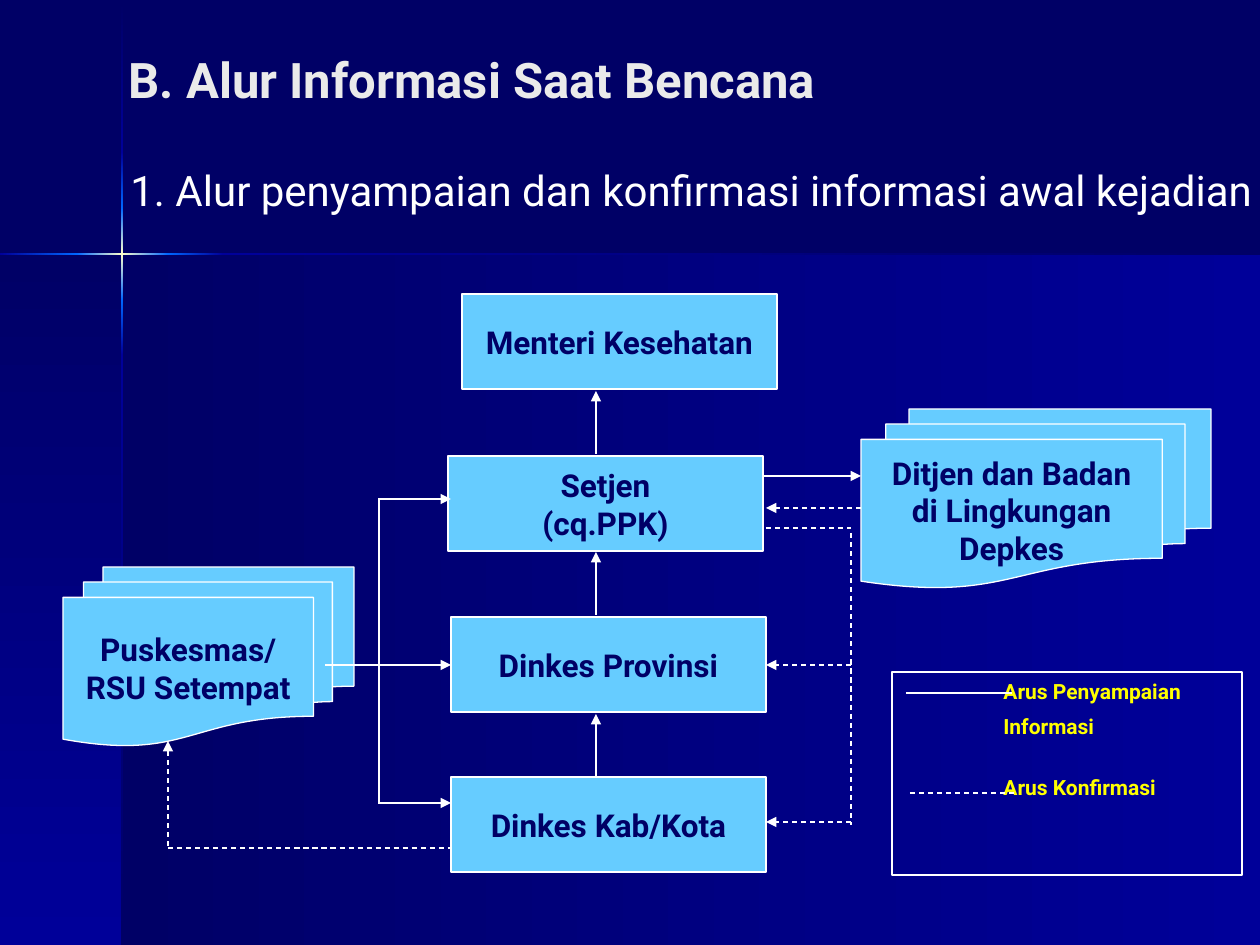
from itertools import pairwise

from lxml import etree
from pptx import Presentation
from pptx.dml.color import RGBColor
from pptx.enum.dml import MSO_LINE
from pptx.enum.shapes import MSO_CONNECTOR, MSO_SHAPE
from pptx.enum.text import MSO_ANCHOR, MSO_AUTO_SIZE, PP_ALIGN
from pptx.oxml.ns import qn
from pptx.util import Pt

RECT = MSO_SHAPE.RECTANGLE
DOCUMENTS = MSO_SHAPE.FLOWCHART_MULTIDOCUMENT
STRAIGHT = MSO_CONNECTOR.STRAIGHT
DASH = MSO_LINE.DASH
MIDDLE, TOP = MSO_ANCHOR.MIDDLE, MSO_ANCHOR.TOP
LEFT, CENTER = PP_ALIGN.LEFT, PP_ALIGN.CENTER

EMU_PER_PX = 914400 / 126
WIDTH, HEIGHT = 1260, 945
FONT = "Roboto"
NAVY, BLUE, GLOW, CREAM = "000066", "000099", "0066FF", "FFFFCC"
WHITE, SKY, YELLOW, PALE = "FFFFFF", "66CCFF", "FFFF00", "EAEAEA"
RIGHTWARD, DOWNWARD = 0, 270

# Colour stops along the two beams of light: position, colour
BEAM_DOWN = [(1, NAVY), (152, BLUE), (208, GLOW), (254, CREAM),
             (300, GLOW), (355, BLUE), (945, NAVY)]
BEAM_ACROSS = [(0, BLUE), (77, GLOW), (122, CREAM),
               (168, GLOW), (223, BLUE), (1260, NAVY)]

OFFICES = [
    (462, 294, ["Menteri Kesehatan"]),
    (448, 456, ["Setjen", "(cq.PPK)"]),
    (451, 617, ["Dinkes Provinsi"]),
    (451, 777, ["Dinkes Kab/Kota"]),
]
OFFICE_SIZE = (315, 95)
UNITS = [
    ((861, 409, 350, 179), ["Ditjen dan Badan", "di Lingkungan", "Depkes"]),
    ((63, 567, 291, 179), ["Puskesmas/", "RSU Setempat"]),
]

# Each flow: start x, start y, end x, end y
REPORT_ARROWS = [
    (596, 777, 596, 714), (596, 615, 596, 552), (596, 454, 596, 391),
    (764, 476, 861, 476), (325, 665, 451, 665),
    (378, 499, 451, 499), (378, 803, 451, 803),
]
REPORT_LINES = [(379, 499, 379, 802), (906, 693, 1012, 693)]
CONFIRM_ARROWS = [
    (861, 508, 766, 508), (851, 665, 766, 665),
    (851, 822, 766, 822), (168, 846, 168, 741),
]
CONFIRM_LINES = [(766, 528, 851, 528), (851, 533, 851, 825),
                 (168, 848, 451, 848), (910, 793, 1016, 793)]


def px(value):
    return round(value * EMU_PER_PX)


def rgb(hex_color):
    return RGBColor.from_string(hex_color)


def write(frame, lines, size, color, bold=True, align=LEFT, anchor=MIDDLE, wrap=False):
    frame.word_wrap = wrap
    frame.auto_size = MSO_AUTO_SIZE.NONE
    frame.vertical_anchor = anchor
    frame.text = "\n".join(lines)
    for paragraph in frame.paragraphs:
        paragraph.alignment = align
        font = paragraph.font
        font.name, font.size, font.bold = FONT, Pt(size), bold
        font.color.rgb = rgb(color)


def add_gradient(slide, box, start, end, angle):
    panel = slide.shapes.add_shape(RECT, *map(px, box))
    panel.shadow.inherit = False
    panel.line.fill.background()
    panel.fill.gradient()
    panel.fill.gradient_angle = angle
    for stop, color in zip(panel.fill.gradient_stops, (start, end)):
        stop.color.rgb = rgb(color)


def add_backdrop(slide):
    slide.background.fill.solid()
    slide.background.fill.fore_color.rgb = rgb(NAVY)
    add_gradient(slide, (122, 254, WIDTH - 122, HEIGHT - 254), NAVY, BLUE, RIGHTWARD)
    add_gradient(slide, (0, 254, 122, HEIGHT - 254), NAVY, BLUE, DOWNWARD)
    for (start, first), (end, last) in pairwise(BEAM_DOWN):
        add_gradient(slide, (121, start, 2, end - start), first, last, DOWNWARD)
    for (start, first), (end, last) in pairwise(BEAM_ACROSS):
        add_gradient(slide, (start, 253, end - start, 2), first, last, RIGHTWARD)


def add_headings(slide):
    title = slide.shapes.title
    title.left, title.top, title.width, title.height = map(px, (116, 42, 809, 73))
    write(title.text_frame, ["B. Alur Informasi Saat Bencana"], 28, PALE, wrap=True)
    subtitle = slide.shapes.add_textbox(*map(px, (118, 158, 1142, 94)))
    write(subtitle.text_frame,
          ["1. Alur penyampaian dan konfirmasi informasi awal kejadian"],
          24, WHITE, bold=False, anchor=TOP)


def add_outlined(slide, kind, box):
    shape = slide.shapes.add_shape(kind, *map(px, box))
    shape.shadow.inherit = False
    shape.line.color.rgb = rgb(WHITE)
    shape.line.width = Pt(0.75)
    return shape


def add_node(slide, kind, box, lines):
    node = add_outlined(slide, kind, box)
    node.fill.solid()
    node.fill.fore_color.rgb = rgb(SKY)
    write(node.text_frame, lines, 18, NAVY, align=CENTER)


def add_flow(slide, ends, dashed=False, arrow=False):
    flow = slide.shapes.add_connector(STRAIGHT, *map(px, ends))
    flow.line.color.rgb = rgb(WHITE)
    flow.line.width = Pt(0.75)
    if dashed:
        flow.line.dash_style = DASH
    if arrow:
        etree.SubElement(flow.line._get_or_add_ln(), qn("a:tailEnd"), type="triangle")
    etree.SubElement(flow._element.spPr, qn("a:effectLst"))


def add_legend(slide):
    legend = add_outlined(slide, RECT, (892, 672, 350, 203))
    legend.fill.background()
    write(legend.text_frame, ["Arus Penyampaian", "Informasi", "Arus Konfirmasi"],
          12, YELLOW, anchor=TOP, wrap=True)
    for paragraph, gap in zip(legend.text_frame.paragraphs, (0, 6, 20)):
        paragraph.space_before = Pt(gap)
        paragraph._p.get_or_add_pPr().set("marL", str(px(99)))


def main():
    deck = Presentation()
    deck.slide_width, deck.slide_height = px(WIDTH), px(HEIGHT)
    slide = deck.slides.add_slide(deck.slide_layouts[5])

    add_backdrop(slide)
    add_headings(slide)
    for left, top, lines in OFFICES:
        add_node(slide, RECT, (left, top, *OFFICE_SIZE), lines)
    for box, lines in UNITS:
        add_node(slide, DOCUMENTS, box, lines)
    add_legend(slide)
    for flows, dashed, arrow in (
        (REPORT_ARROWS, False, True),
        (REPORT_LINES, False, False),
        (CONFIRM_ARROWS, True, True),
        (CONFIRM_LINES, True, False),
    ):
        for ends in flows:
            add_flow(slide, ends, dashed, arrow)

    deck.save("out.pptx")


if __name__ == "__main__":
    main()
